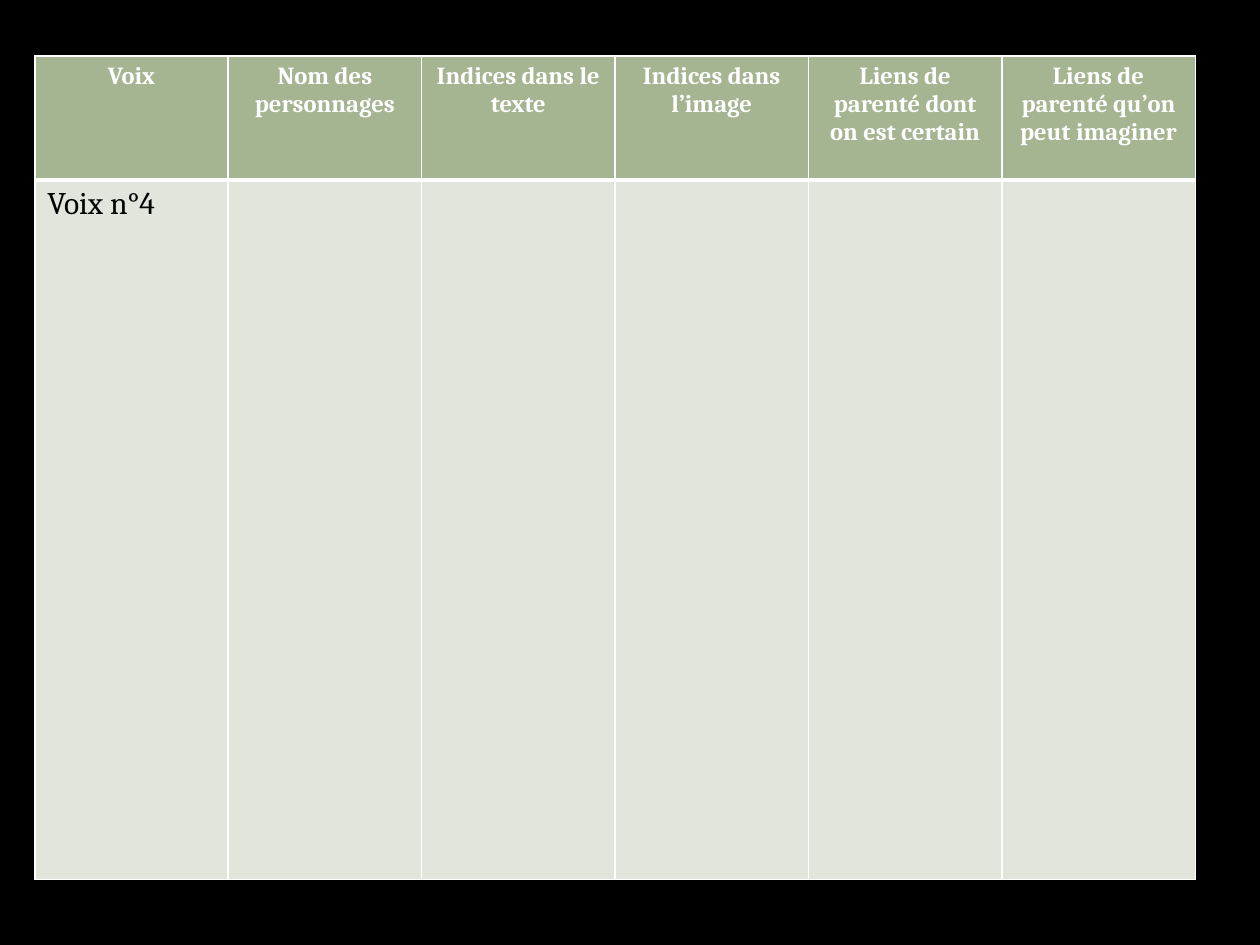
from lxml import etree
from pptx import Presentation
from pptx.dml.color import RGBColor
from pptx.enum.text import PP_ALIGN
from pptx.oxml.ns import qn
from pptx.util import Pt

CENTER, LEFT = PP_ALIGN.CENTER, PP_ALIGN.LEFT
FONT = "Cambria"
WHITE, BLACK = "FFFFFF", "000000"
HEADER_FILL, BODY_FILL = "A5B592", "E1E5DC"
THIN, THICK = 1, 3

HEADERS = [
    "Voix",
    "Nom des personnages",
    "Indices dans le texte",
    "Indices dans l’image",
    "Liens de parenté dont on est certain",
    "Liens de parenté qu’on peut imaginer",
]
VOICE = ["Voix n°4"] + [""] * (len(HEADERS) - 1)


def color(value):
    return RGBColor.from_string(value)


def set_borders(cell, top, bottom):
    """Draw white cell borders; the side borders are thin."""
    properties = cell._tc.get_or_add_tcPr()
    for side, width in (("L", THIN), ("R", THIN), ("T", top), ("B", bottom)):
        line = etree.SubElement(properties, qn(f"a:ln{side}"), w=str(Pt(width)))
        fill = etree.SubElement(line, qn("a:solidFill"))
        etree.SubElement(fill, qn("a:srgbClr"), val=WHITE)


def fill_row(row, texts, fill, text_color, size, bold, alignment, top, bottom):
    for cell, text in zip(row.cells, texts):
        set_borders(cell, top, bottom)
        cell.fill.solid()
        cell.fill.fore_color.rgb = color(fill)
        if not text:
            continue
        paragraph = cell.text_frame.paragraphs[0]
        paragraph.alignment = alignment
        run = paragraph.add_run()
        run.text = text
        run.font.name = FONT
        run.font.size = Pt(size)
        run.font.bold = bold
        run.font.color.rgb = color(text_color)


def add_voice_table(slide, left, top, width, height, header_height):
    table = slide.shapes.add_table(
        2, len(HEADERS), Pt(left), Pt(top), Pt(width), Pt(height)
    ).table
    for column in table.columns:
        column.width = Pt(width / len(HEADERS))
    header, body = table.rows
    header.height = Pt(header_height)
    body.height = Pt(height - header_height)
    fill_row(header, HEADERS, HEADER_FILL, WHITE, 14, True, CENTER, THIN, THICK)
    fill_row(body, VOICE, BODY_FILL, BLACK, 18, False, LEFT, THICK, THIN)


def main():
    presentation = Presentation()
    presentation.slide_width, presentation.slide_height = Pt(720), Pt(540)
    slide = presentation.slides.add_slide(presentation.slide_layouts[6])
    slide.background.fill.solid()
    slide.background.fill.fore_color.rgb = color(BLACK)
    add_voice_table(slide, 19.9, 32, 663.3, 470.6, 70.8)
    presentation.save("out.pptx")


if __name__ == "__main__":
    main()
